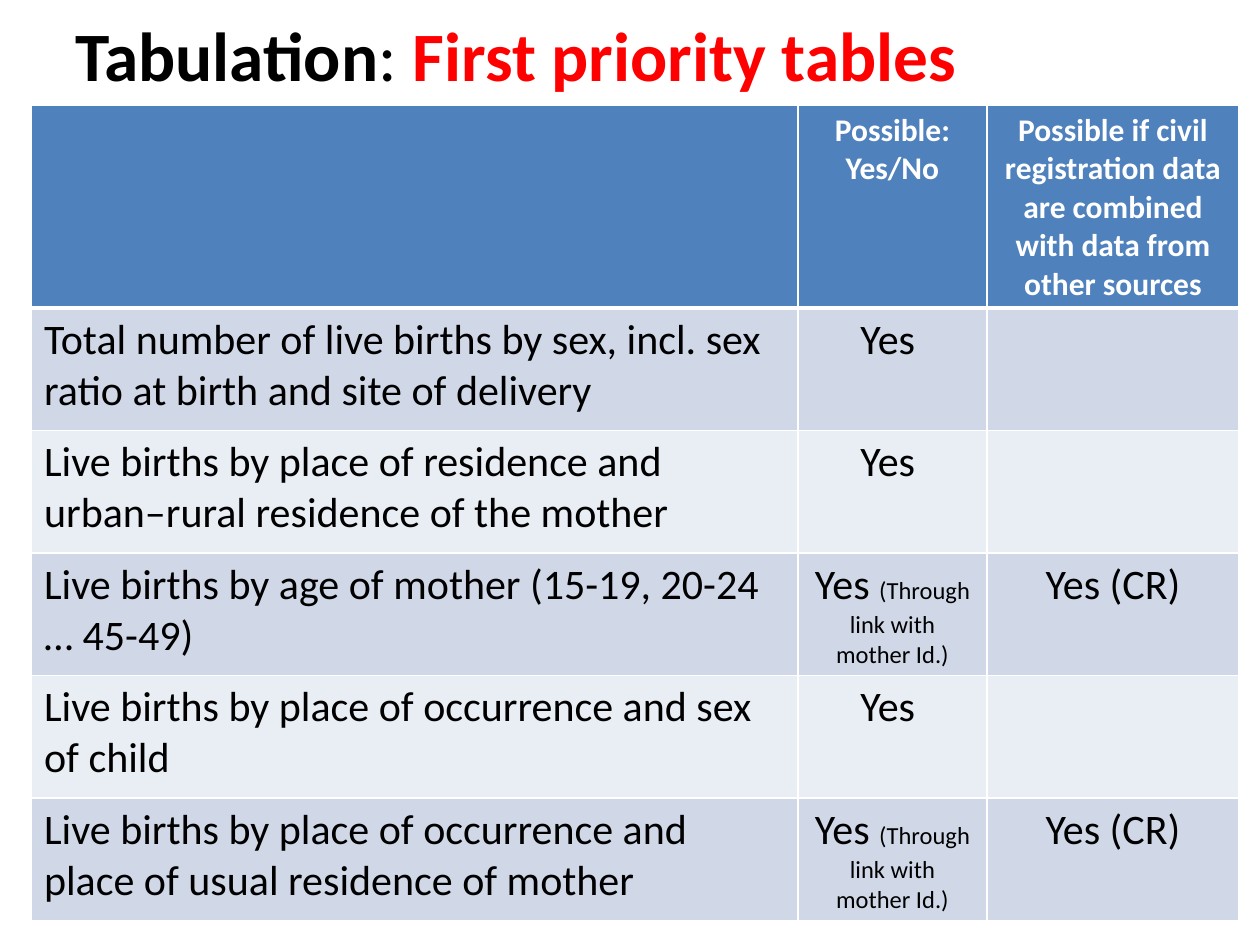
from lxml.etree import SubElement
from pptx import Presentation
from pptx.dml.color import RGBColor
from pptx.enum.text import MSO_ANCHOR, PP_ALIGN
from pptx.oxml.ns import qn
from pptx.util import Pt

COLORS = {
    "black": "000000",
    "red": "FF0000",
    "white": "FFFFFF",
    "header": "4F81BD",
    "odd": "D0D8E8",
    "even": "E9EDF4",
}
COLUMN_WIDTHS = [438, 108, 144]
HEADER_HEIGHT = 116
ROW_HEIGHT = 70

YES = [("Yes ", 24)]
LINKED = YES + [("(Through link with mother Id.)", 14)]
COMBINED = [("Yes (CR)", 24)]
HEADERS = [
    "",
    "Possible: Yes/No",
    "Possible if civil registration data are combined with data from other sources",
]
TABULATIONS = [
    ("Total number of live births by sex, incl. sex ratio at birth and site of delivery", YES, []),
    ("Live births by place of residence and urban–rural residence of the mother", YES, []),
    ("Live births by age of mother (15-19, 20-24 … 45-49)", LINKED, COMBINED),
    ("Live births by place of occurrence and sex of child", YES, []),
    ("Live births by place of occurrence and place of usual residence of mother", LINKED, COMBINED),
]


class SlideBuilder:
    """Holds the style and the current slide, and adds elements to it."""

    def __init__(self, slide, font="Calibri"):
        self.slide = slide
        self.font = font

    def add_run(self, paragraph, text, size, color="black", bold=False):
        run = paragraph.add_run()
        run.text = text
        run.font.name = self.font
        run.font.size = Pt(size)
        run.font.bold = bold
        run.font.color.rgb = RGBColor.from_string(COLORS[color])

    def add_title(self, left, top, width, height, runs):
        frame = self.slide.shapes.add_textbox(Pt(left), Pt(top), Pt(width), Pt(height)).text_frame
        frame.word_wrap = True
        frame.vertical_anchor = MSO_ANCHOR.MIDDLE
        for text, color, bold in runs:
            self.add_run(frame.paragraphs[0], text, 39.6, color, bold)

    def add_border(self, cell, side, width):
        properties = cell._tc.get_or_add_tcPr()
        line = SubElement(properties, qn(f"a:ln{side}"), w=str(Pt(width)))
        fill = SubElement(line, qn("a:solidFill"))
        SubElement(fill, qn("a:srgbClr"), val=COLORS["white"])

    def fill_cell(self, cell, runs, fill, centered, borders, color="black", bold=False):
        for side, width in borders.items():
            self.add_border(cell, side, width)
        cell.fill.solid()
        cell.fill.fore_color.rgb = RGBColor.from_string(COLORS[fill])
        paragraph = cell.text_frame.paragraphs[0]
        paragraph.alignment = PP_ALIGN.CENTER if centered else PP_ALIGN.LEFT
        for text, size in runs:
            self.add_run(paragraph, text, size, color, bold)

    def add_table(self, left, top, headers, rows):
        heights = [HEADER_HEIGHT] + [ROW_HEIGHT] * len(rows)
        table = self.slide.shapes.add_table(
            len(heights), len(headers), Pt(left), Pt(top), Pt(sum(COLUMN_WIDTHS)), Pt(sum(heights))
        ).table
        for column, width in zip(table.columns, COLUMN_WIDTHS):
            column.width = Pt(width)
        for row, height in zip(table.rows, heights):
            row.height = Pt(height)
        for index, text in enumerate(headers):
            runs = [(text, 18)] if text else []
            borders = {"L": 1, "R": 1, "T": 1, "B": 3}
            self.fill_cell(table.cell(0, index), runs, "header", True, borders, "white", True)
        for number, (name, possible, combined) in enumerate(rows, start=1):
            fill = "odd" if number % 2 else "even"
            borders = {"L": 1, "R": 1, "T": 3 if number == 1 else 1, "B": 1}
            for index, runs in enumerate([[(name, 24)], possible, combined]):
                self.fill_cell(table.cell(number, index), runs, fill, index > 0, borders)


def main():
    presentation = Presentation()
    presentation.slide_width = Pt(720)
    presentation.slide_height = Pt(540)
    builder = SlideBuilder(presentation.slides.add_slide(presentation.slide_layouts[6]))
    builder.add_title(36, 6, 648, 50, [
        ("Tabulation", "black", True),
        (": ", "black", False),
        ("First priority tables", "red", True),
    ])
    builder.add_table(18, 60, HEADERS, TABULATIONS)
    presentation.save("out.pptx")


if __name__ == "__main__":
    main()
